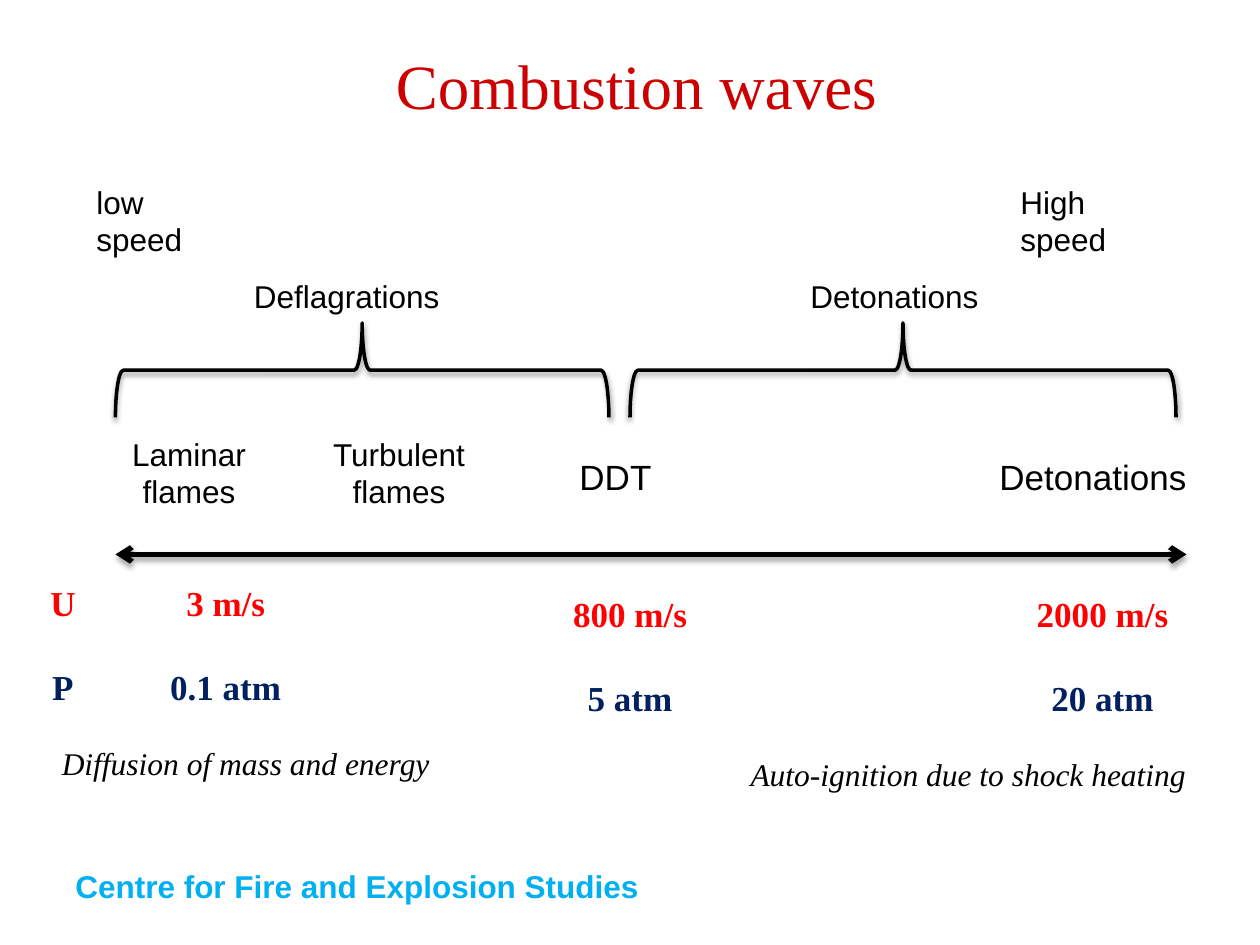
import pptx
import pptx.util
import pptx.dml.color
import pptx.enum.shapes
import pptx.enum.text
import pptx.oxml
import pptx.oxml.ns
from lxml import etree

RGBColor = pptx.dml.color.RGBColor
BLACK = RGBColor(0x00, 0x00, 0x00)
RED = RGBColor(0xFF, 0x00, 0x00)
DARK_RED = RGBColor(0xCC, 0x00, 0x00)
NAVY = RGBColor(0x00, 0x20, 0x60)
SKY = RGBColor(0x00, 0xB0, 0xF0)
SANS, SERIF = "Arial", "Times New Roman"
LEFT, CENTER = pptx.enum.text.PP_ALIGN.LEFT, pptx.enum.text.PP_ALIGN.CENTER
qn = pptx.oxml.ns.qn

prs = pptx.Presentation()
prs.slide_width = pptx.util.Inches(10)
prs.slide_height = pptx.util.Inches(7.5)
s = prs.slides.add_slide(prs.slide_layouts[6])
COL = prs.slide_width / 120
ROW = prs.slide_height / 90


def add_text(text, x, y, w, h, size, font, color=BLACK, align=LEFT,
             bold=False, italic=False, wrap=True):
    """Add a text box placed in grid columns and rows; one paragraph per line."""
    sp = s.shapes.add_textbox(round(x * COL), round(y * ROW),
                              round(w * COL), round(h * ROW))
    tf = sp.text_frame
    tf.word_wrap = wrap
    tf.text = text
    for p in tf.paragraphs:
        p.alignment = align
        p.font.size = pptx.util.Pt(size)
        p.font.name = font
        p.font.color.rgb = color
        p.font.bold = bold
        p.font.italic = italic
    return sp


def style_outline(sp, width, alpha, distance):
    """Give a black line and a soft shadow falling straight down."""
    sp.line.color.rgb = BLACK
    sp.line.width = pptx.util.Pt(width)
    sp_pr = sp._element.spPr
    effects = etree.SubElement(sp_pr, qn("a:effectLst"))
    shadow = etree.SubElement(
        effects, qn("a:outerShdw"), blurRad=str(pptx.util.Pt(3.1)),
        dist=str(pptx.util.Pt(distance)), dir="5400000", rotWithShape="0")
    color = etree.SubElement(shadow, qn("a:srgbClr"), val=str(BLACK))
    etree.SubElement(color, qn("a:alpha"), val=str(alpha * 1000))


# Footer and title
add_text("Centre for Fire and Explosion Studies", 6, 82, 61.4, 6.2, 18, SANS,
         SKY, bold=True)
title = add_text("", 5.6, 0, 108, 15, 36, SERIF, DARK_RED, CENTER)
title.text_frame.vertical_anchor = pptx.enum.text.MSO_ANCHOR.MIDDLE
p = title.text_frame.paragraphs[0]
r = p.add_run()
r.text = " "
r.font.size = pptx.util.Pt(44)
r.font.name = SANS
r = p.add_run()
r.text = "Combustion waves"

# Speed axis
axis = s.shapes.add_connector(
    pptx.enum.shapes.MSO_CONNECTOR.STRAIGHT,
    round(11 * COL), round(52.8 * ROW), round(113 * COL), round(52.8 * ROW))
style_outline(axis, 3, 35, 1.8)
ln = axis.line._get_or_add_ln()
for end in ("a:headEnd", "a:tailEnd"):
    etree.SubElement(ln, qn(end), type="arrow")

# Ends of the speed range, wrapped after the first word by a wide right inset
for text, x, w in (("low speed", 8, 15.2), ("High speed", 96, 17.2)):
    sp = add_text(text, x, 16.8, w, 4.8, 18, SANS)
    sp.text_frame.margin_right = round(5 * COL)

# Regime names above the braces, wave types below them
for text, x, w in (("Deflagrations", 23, 20.3), ("Detonations", 76, 18.6)):
    add_text(text, x, 25.8, w, 4.8, 18, SANS, wrap=False)
for text, x, w in (("Laminar\nflames", 11, 14), ("Turbulent\nflames", 30, 16)):
    add_text(text, x, 40.8, w, 8.5, 18, SANS, align=CENTER)
for text, x, w in (("DDT", 54, 9.5), ("Detonations", 94, 20.3)):
    add_text(text, x, 42.8, w, 5.3, 20, SANS, wrap=False)

# Braces are drawn upright and turned to point up
BRACE_DEPTH, BRACE_MIDDLE = 9, 35.25
for start, end in ((60, 112), (11, 58)):
    length = end - start
    sp = s.shapes.add_shape(
        pptx.enum.shapes.MSO_SHAPE.RIGHT_BRACE,
        round(((start + end) / 2 - BRACE_DEPTH / 2) * COL),
        round((BRACE_MIDDLE - length / 2) * ROW),
        round(BRACE_DEPTH * COL), round(length * ROW))
    sp.rotation = 270
    sp.fill.background()
    style_outline(sp, 2, 38, 1.6)

# Velocity and pressure: x, width, row offset, then the two values
for x, w, offset, velocity, pressure in (
        (0, 12, 0, "U", "P"),
        (12, 19, 0, "3 m/s", "0.1 atm"),
        (49, 22, 1, "800 m/s", "5 atm"),
        (95, 20, 1, "2000 m/s", "20 atm")):
    for text, y, color in ((velocity, 54.8, RED), (pressure, 62.8, NAVY)):
        add_text(text, x, y + offset, w, 5.3, 20, SERIF, color, CENTER, bold=True)

# Mechanisms
for text, x, y, w in (
        ("Diffusion of mass and energy", 4.7, 70.3, 43.1),
        ("Auto-ignition due to shock heating", 70.3, 71.3, 46.9)):
    add_text(text, x, y, w, 4.8, 18, SERIF, italic=True)

prs.save("out.pptx")
